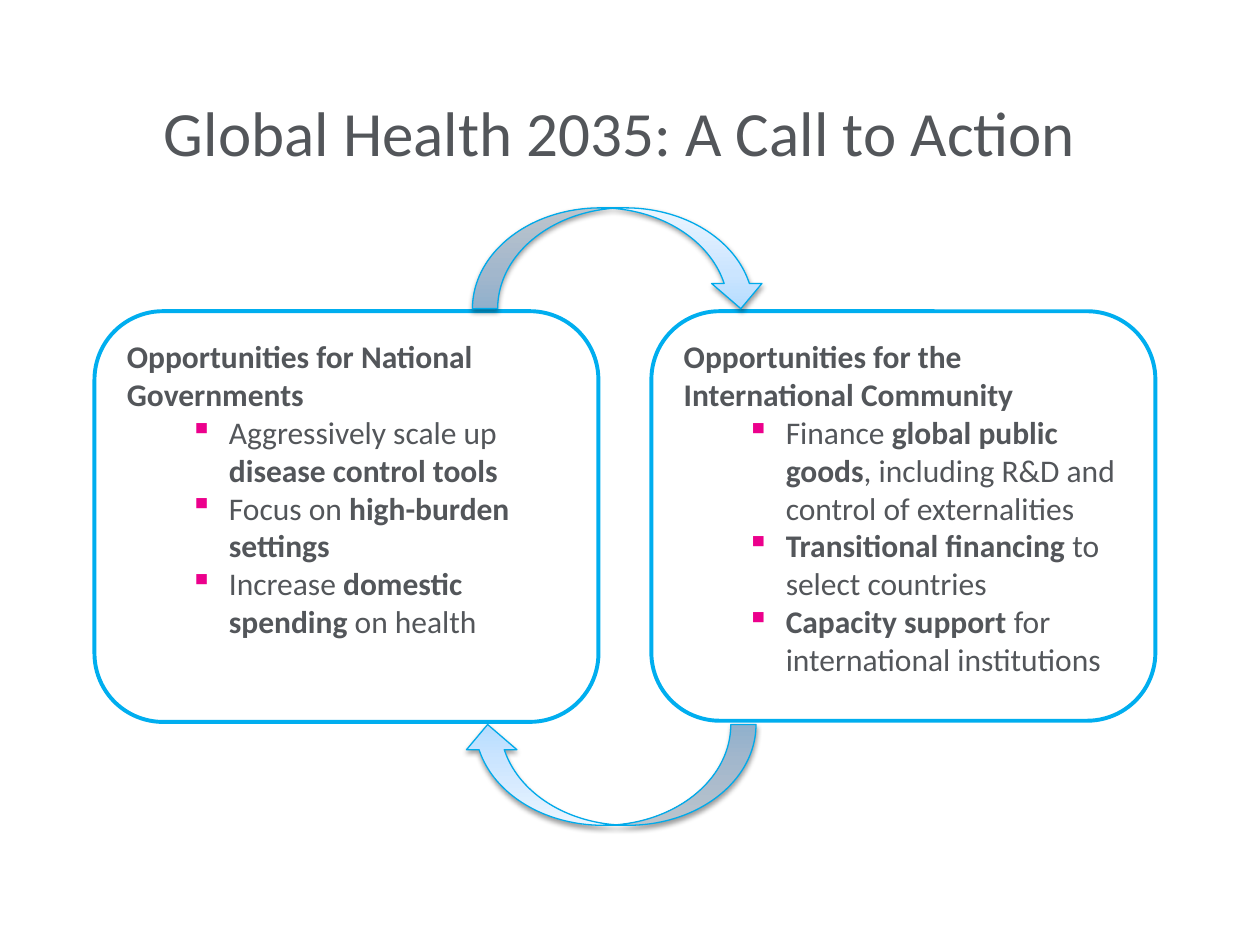
from copy import deepcopy

from lxml import etree
from pptx import Presentation, util as u
from pptx.dml.color import RGBColor
from pptx.enum import shapes, text
from pptx.oxml.ns import qn


def tint(code):
    return RGBColor.from_string(code)


def add(node, tag, **attrs):
    return etree.SubElement(node, qn(tag), {k: str(v) for k, v in attrs.items()})


class Deck:
    """Holds the style and the current slide, and draws each kind of element."""

    face, ink, edge, mark = "Calibri", "53565A", "00AEEF", "EC008C"
    rim, shade = "00AAEA", "000000"
    blend = [(0, "B5DCFF"), (0.35, "CBE5FF"), (1, "EBF5FF")]

    def __init__(self, wide, high):
        self.prs = Presentation()
        self.prs.slide_width, self.prs.slide_height = u.Inches(wide), u.Inches(high)
        self.slide = self.prs.slides.add_slide(self.prs.slide_layouts[6])

    def font(self, para, size, bold=None):
        font = para.font
        font.name, font.size, font.bold = self.face, u.Pt(size), bold
        font.color.rgb = tint(self.ink)

    def title(self, words, *box):
        frame = self.slide.shapes.add_textbox(*map(u.Inches, box)).text_frame
        frame.word_wrap = True
        frame.vertical_anchor = text.MSO_ANCHOR.MIDDLE
        para = frame.paragraphs[0]
        para.text, para.alignment = words, text.PP_ALIGN.CENTER
        self.font(para, 36)

    def shape(self, kind, box, color, width):
        shape = self.slide.shapes.add_shape(kind, *map(u.Inches, box))
        shape.shadow.inherit = False
        shape.line.color.rgb, shape.line.width = tint(color), u.Pt(width)
        return shape

    def bullet(self, para, words):
        para.level = 1
        props = para._p.get_or_add_pPr()
        props.set("marL", str(u.Inches(0.81)))
        props.set("indent", str(u.Inches(-0.31)))
        add(add(props, "a:buClr"), "a:srgbClr", val=self.mark)
        add(props, "a:buChar", char="▪")
        for num, part in enumerate(words.split("*")):
            if part:
                run = para.add_run()
                run.text, run.font.bold = part, num % 2 == 1

    def panel(self, head, items, *box):
        shape = self.shape(shapes.MSO_SHAPE.ROUNDED_RECTANGLE, box, self.edge, 2.25)
        shape.fill.background()
        frame = shape.text_frame
        frame.word_wrap = True
        frame.vertical_anchor = text.MSO_ANCHOR.TOP
        frame.paragraphs[0].text = head
        self.font(frame.paragraphs[0], 18, True)
        for item in items:
            para = frame.add_paragraph()
            self.bullet(para, item)
            self.font(para, 18)
        for para in frame.paragraphs:
            para.alignment = text.PP_ALIGN.LEFT

    def arrow(self, turn, *box):
        shape = self.shape(shapes.MSO_SHAPE.CURVED_DOWN_ARROW, box, self.rim, 0.75)
        shape.rotation = turn
        shape.fill.gradient()
        shape.fill.gradient_angle = 90
        props = shape._element.spPr
        stops = props.find(".//" + qn("a:gsLst"))
        stops.append(deepcopy(stops[0]))
        for stop, (place, color) in zip(shape.fill.gradient_stops, self.blend):
            stop.position, stop.color.rgb = place, tint(color)
        glow = add(props.find(qn("a:effectLst")), "a:outerShdw", blurRad=u.Pt(3.1),
                   dist=u.Pt(1.6), dir=5400000, rotWithShape=0)
        add(add(glow, "a:srgbClr", val=self.shade), "a:alpha", val=38000)

    def save(self):
        self.prs.save("out.pptx")


def main():
    deck = Deck(10, 7.5)
    deck.title("Global Health 2035: A Call to Action", 0.42, 0.42, 9, 1.25)
    deck.panel("Opportunities for National Governments", [
        "Aggressively scale up *disease control tools*",
        "Focus on *high-burden settings*",
        "Increase *domestic spending* on health",
    ], 0.75, 2.47, 4, 3.26)
    deck.panel("Opportunities for the International Community", [
        "Finance *global public goods*, including R&D and control of externalities",
        "*Transitional financing *to select countries",
        "*Capacity support *for international institutions",
    ], 5.17, 2.47, 4, 3.25)
    deck.arrow(0, 3.75, 1.65, 2.33, 0.8)
    deck.arrow(180, 3.67, 5.75, 2.33, 0.8)
    deck.save()


if __name__ == "__main__":
    main()
